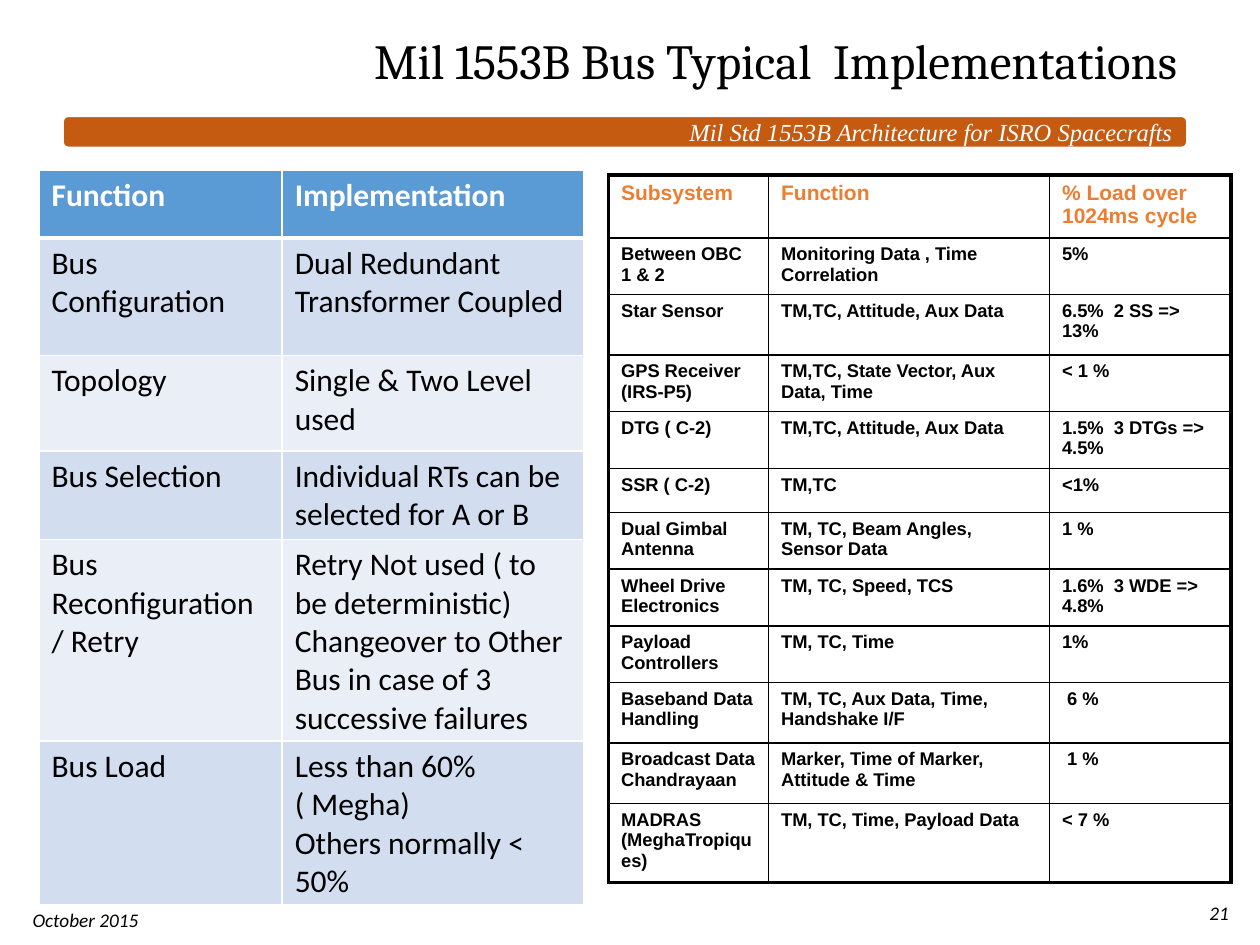
import pptx
import pptx.util
import pptx.dml.color
import pptx.enum.shapes
import pptx.enum.text
import lxml.etree

TITLE = "Mil 1553B Bus Typical  Implementations"
BANNER = "Mil Std 1553B Architecture for ISRO Spacecrafts"
FOOTERS = [("October 2015", (0.016, 0.955, 0.105, 0.039)),
           ("21", (0.95, 0.947, 0.038, 0.039))]
IMPLEMENTATION = [
    ("Function", "Implementation"),
    ("Bus Configuration", "Dual Redundant\nTransformer Coupled"),
    ("Topology", "Single & Two Level used"),
    ("Bus Selection", "Individual RTs can be selected for A or B"),
    ("Bus Reconfiguration / Retry",
     "Retry Not used ( to be deterministic)\n"
     "Changeover to Other Bus in case of 3 successive failures"),
    ("Bus Load", "Less than 60%  ( Megha)\nOthers normally < 50%"),
]
BUS_LOAD = [
    ("Subsystem", "Function", "% Load over 1024ms cycle"),
    ("Between OBC 1 & 2", "Monitoring Data , Time Correlation", "5%"),
    ("Star Sensor", "TM,TC, Attitude, Aux Data", "6.5%  2 SS => 13%"),
    ("GPS Receiver (IRS-P5)", "TM,TC, State Vector, Aux Data, Time", "< 1 %"),
    ("DTG ( C-2)", "TM,TC, Attitude, Aux Data", "1.5%  3 DTGs => 4.5%"),
    ("SSR ( C-2)", "TM,TC", "<1%"),
    ("Dual Gimbal Antenna", "TM, TC, Beam Angles, Sensor Data", "1 %"),
    ("Wheel Drive Electronics", "TM, TC, Speed, TCS", "1.6%  3 WDE => 4.8%"),
    ("Payload Controllers", "TM, TC, Time", "1%"),
    ("Baseband Data Handling", "TM, TC, Aux Data, Time, Handshake I/F", " 6 %"),
    ("Broadcast Data Chandrayaan", "Marker, Time of Marker, Attitude & Time", " 1 %"),
    ("MADRAS (MeghaTropiques)", "TM, TC, Time, Payload Data", "< 7 %"),
]
COLORS = {"white": "FFFFFF", "black": "000000", "rust": "C55A11", "orange": "ED7D31",
          "blue": "5B9BD5", "band": "D2DEEF", "pale": "EAEFF7"}
FONTS = {
    "title": dict(name="Cambria", size=28, color="black"),
    "banner": dict(name="Times New Roman", size=14, color="white", italic=True),
    "footer": dict(name="Calibri", size=11, color="black", italic=True),
    "implementation head": dict(name="Calibri", size=18, color="white", bold=True),
    "implementation": dict(name="Calibri", size=18, color="black", bold=False),
    "load head": dict(name="Arial", size=12, color="orange", bold=True),
    "load": dict(name="Arial", size=10.5, color="black", bold=True),
}
ALIGN = pptx.enum.text.PP_ALIGN
ANCHOR = pptx.enum.text.MSO_ANCHOR
AUTO = pptx.enum.text.MSO_AUTO_SIZE
INCH = pptx.util.Inches

deck = pptx.Presentation()
deck.slide_width, deck.slide_height = INCH(10), INCH(7.5)
slide = deck.slides.add_slide(deck.slide_layouts[5])


def rgb(color):
    return pptx.dml.color.RGBColor.from_string(COLORS[color])


def assign(target, values):
    for key, value in values.items():
        setattr(target, key, value)


def place(left, top, width, height):
    across, down = deck.slide_width, deck.slide_height
    return [int(n) for n in (left * across, top * down, width * across, height * down)]


def write(frame, text, style, paragraph_format=None, **frame_format):
    frame.text = text
    assign(frame, frame_format)
    font_format = dict(FONTS[style])
    color = font_format.pop("color")
    font_format["size"] = pptx.util.Pt(font_format["size"])
    for paragraph in frame.paragraphs:
        assign(paragraph, paragraph_format or {})
        for run in paragraph.runs:
            assign(run.font, font_format)
            run.font.color.rgb = rgb(color)


def edge(cell, side, color, points):
    properties = cell._tc.get_or_add_tcPr()
    tag = pptx.oxml.ns.qn
    line = lxml.etree.SubElement(properties, tag("a:ln" + side), w=str(int(points * 12700)))
    fill = lxml.etree.SubElement(line, tag("a:solidFill"))
    lxml.etree.SubElement(fill, tag("a:srgbClr"), val=COLORS[color])


def add_grid(rows, area, widths, heights, style, edge_color, edge_points, fill_color):
    grid = slide.shapes.add_table(len(rows), len(widths), *place(*area)).table
    assign(grid, dict(first_row=False, horz_banding=False))
    for column, width in zip(grid.columns, widths):
        column.width = INCH(width)
    for row, height in zip(grid.rows, heights):
        row.height = INCH(height)
    for r, texts in enumerate(rows):
        for c, text in enumerate(texts):
            cell = grid.cell(r, c)
            write(cell.text_frame, text, style if r else style + " head")
            for side, points in edge_points(r, c).items():
                edge(cell, side, edge_color, points)
            color = fill_color(r)
            if color:
                cell.fill.solid()
                cell.fill.fore_color.rgb = rgb(color)
            else:
                cell.fill.background()


def header_rule(r, c):
    return dict(L=1, R=1, T=3 if r == 1 else 1, B=3 if r == 0 else 1)


def outer_frame(r, c):
    outer = dict(L=c == 0, R=c == 2, T=r == 0, B=r == len(BUS_LOAD) - 1)
    return {side: 2.25 if at_rim else 1 for side, at_rim in outer.items()}


def banded(r):
    return ("band" if r % 2 else "pale") if r else "blue"


banner = slide.shapes.add_shape(pptx.enum.shapes.MSO_SHAPE.ROUNDED_RECTANGLE,
                                *place(0.05, 0.123, 0.892, 0.033))
banner.adjustments[0] = 0.17
banner.shadow.inherit = False
banner.fill.solid()
banner.fill.fore_color.rgb = rgb("rust")
banner.line.color.rgb = rgb("white")
banner.line.width = pptx.util.Pt(1)
write(banner.text_frame, BANNER, "banner", dict(alignment=ALIGN.RIGHT),
      word_wrap=False, vertical_anchor=ANCHOR.MIDDLE,
      margin_top=INCH(0.02), margin_bottom=INCH(0.02))

for text, area in FOOTERS:
    footer = slide.shapes.add_textbox(*place(*area))
    write(footer.text_frame, text, "footer", word_wrap=False, auto_size=AUTO.SHAPE_TO_FIT_TEXT)

title = slide.shapes.title
assign(title, dict(zip(("left", "top", "width", "height"), place(0.05, 0.033, 0.894, 0.092))))
write(title.text_frame, TITLE, "title", dict(alignment=ALIGN.RIGHT, line_spacing=0.9),
      vertical_anchor=ANCHOR.TOP, auto_size=AUTO.NONE, word_wrap=True)

add_grid(IMPLEMENTATION, (0.031, 0.18, 0.432, 0.776), (1.93, 2.39),
         (0.54, 0.93, 0.76, 0.54, 1.32, 0.93),
         "implementation", "white", header_rule, banded)
add_grid(BUS_LOAD, (0.483, 0.185, 0.494, 0.768), (1.27, 2.23, 1.44),
         (0.49, 0.35, 0.48, 0.34, 0.35, 0.35, 0.34, 0.35, 0.35, 0.48, 0.48, 0.48),
         "load", "black", outer_frame, lambda r: None)

deck.save("out.pptx")
